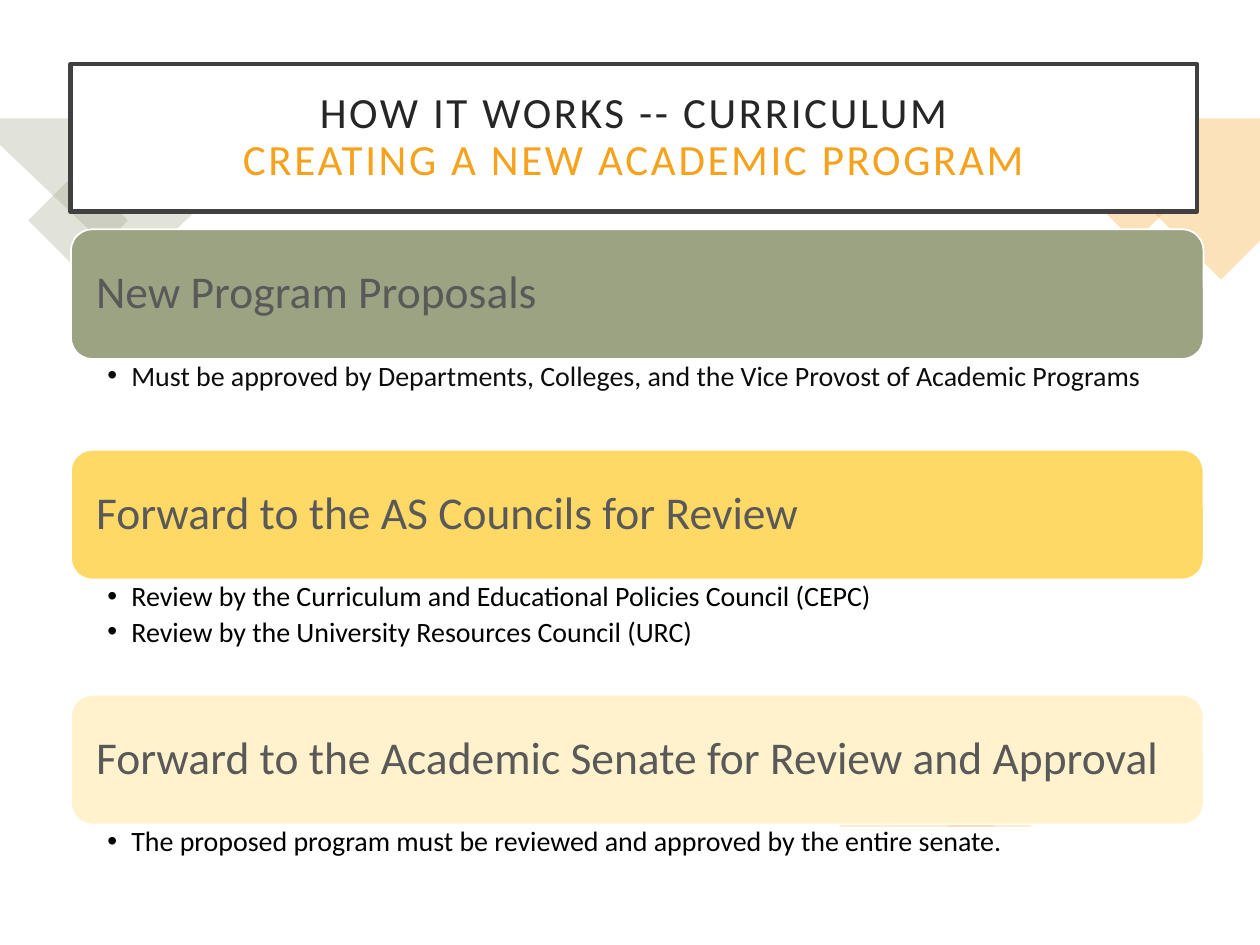
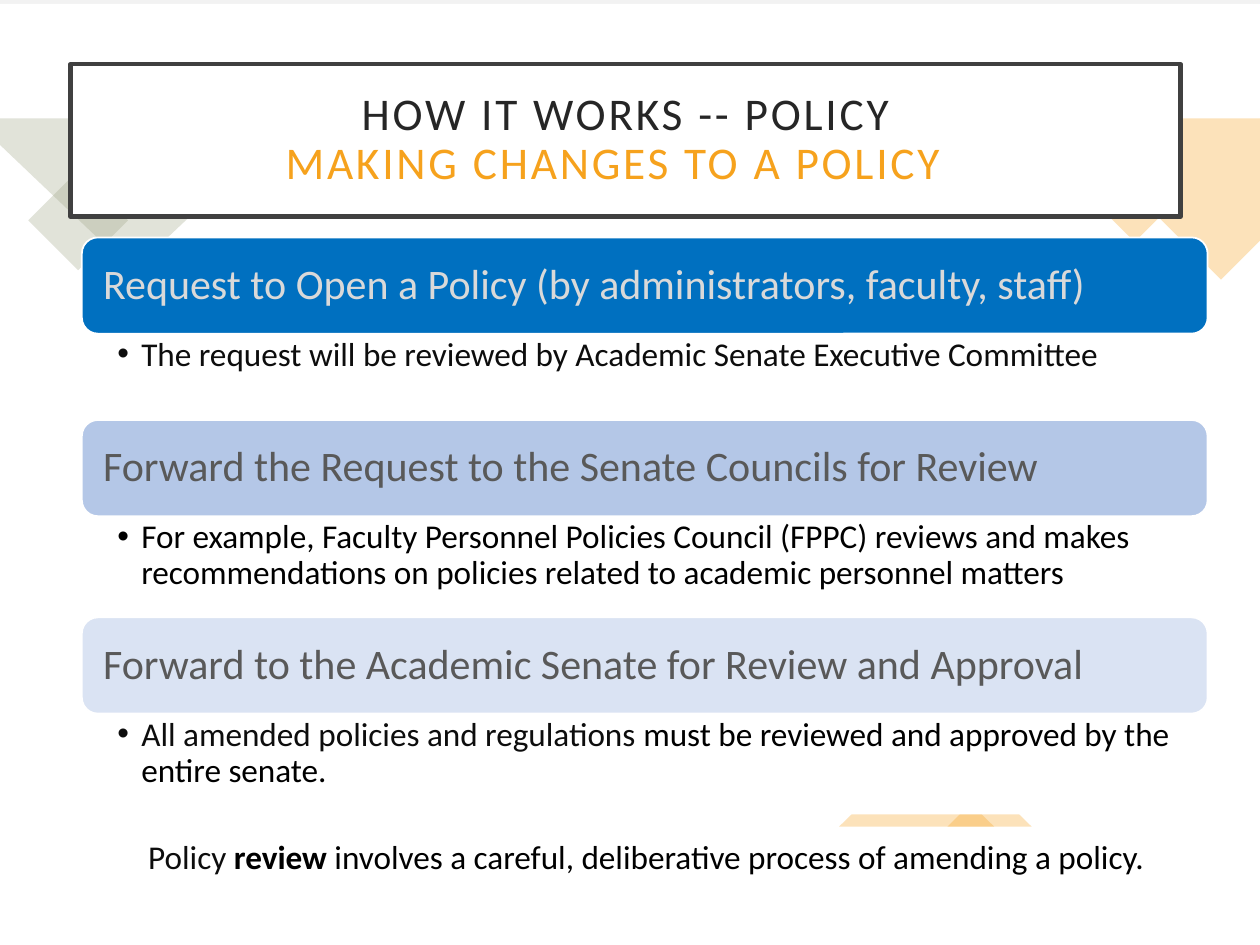
from pptx import Presentation
from pptx.dml.color import RGBColor
from pptx.enum.shapes import MSO_SHAPE
from pptx.enum.text import MSO_ANCHOR, MSO_AUTO_SIZE, PP_ALIGN
from pptx.oxml.ns import qn
from pptx.util import Pt
from lxml import etree

RECTANGLE, ROUNDED = MSO_SHAPE.RECTANGLE, MSO_SHAPE.ROUNDED_RECTANGLE
TRIANGLE = MSO_SHAPE.ISOSCELES_TRIANGLE
TOP, MIDDLE = MSO_ANCHOR.TOP, MSO_ANCHOR.MIDDLE
LEFT, CENTER = PP_ALIGN.LEFT, PP_ALIGN.CENTER
NO_AUTOFIT = MSO_AUTO_SIZE.NONE

FONT = "Calibri"
COLORS = {
    "backdrop": "F2F2F2", "white": "FFFFFF", "frame": "404040",
    "sage": "9CA383", "orange": "F6A21D", "title": "262626",
    "gold": "FFD966", "cream": "FFF2CC",
    "blue": "0070C0", "light_blue": "B4C7E7", "pale_blue": "DAE3F3",
    "gray": "595959", "light_gray": "D9D9D9",
    "ink": "0D0D0D", "black": "000000",
}
SLIDE_WIDTH, SLIDE_HEIGHT = 720, 540

# Decorations: kind, left, top, width, height, rotation, color
DECORATIONS = [
    (RECTANGLE, 24.5, 105.8, 40.3, 40.3, 45, "sage"),
    (RECTANGLE, 629.3, 92.2, 38.2, 38.2, 45, "orange"),
    (TRIANGLE, 479.5, 428.4, 88.6, 44, 0, "orange"),
    (TRIANGLE, 541.4, 448.6, 48.2, 23.8, 0, "orange"),
]
CORNERS = [
    ("sage", [(0, 67.7), (167.8, 67.7), (75.6, 154.8), (0, 82.8)]),
    ("orange", [(637.2, 67.7), (720, 67.7), (720, 137.5), (697.7, 159.8), (621.4, 83.5)]),
]

# Each step: bar top, bar color, heading color, heading, detail height, bullets.
# A bullet is a list of runs: text, color, bold.
SLIDES = [
    {
        "panel_top": 0, "title_size": 24.6, "title_spacing": 150,
        "title_box": (40.3, 36.7, 643.7, 84.2), "subtitle_margin": 0,
        "title": ["HOW IT WORKS -- CURRICULUM", "CREATING A NEW ACADEMIC PROGRAM"],
        "bar_left": 40.5, "bar_width": 647.3, "bar_height": 74.2,
        "heading_size": 26, "heading_inset": 10.8,
        "detail_size": 16, "detail_inset": 20.9, "detail_top_inset": 1.6,
        "detail_space": 3, "detail_fill": None, "note": None,
        "steps": [
            (131, "sage", "gray", "New Program Proposals", 40,
             [[("Must be approved by Departments, Colleges, and the Vice Provost of Academic Programs",
                "ink", False)]]),
            (257, "gold", "gray", "Forward to the AS Councils for Review", 43,
             [[("Review by the Curriculum and Educational Policies Council (CEPC)", "black", False)],
              [("Review by the University Resources Council (URC)", "black", False)]]),
            (397, "cream", "gray", "Forward to the Academic Senate for Review and Approval", 22,
             [[("The proposed program must be reviewed and approved by the entire senate.",
                "black", False)]]),
        ],
    },
    {
        "panel_top": 2.2, "title_size": 25.9, "title_spacing": 160,
        "title_box": (40.3, 36.7, 634.3, 87.1), "subtitle_margin": 14.4,
        "title": ["HOW IT WORKS -- POLICY", "MAKING CHANGES TO A POLICY"],
        "bar_left": 46.8, "bar_width": 643.3, "bar_height": 55,
        "heading_size": 24, "heading_inset": 9.5,
        "detail_size": 19, "detail_inset": 20.3, "detail_top_inset": 2.2,
        "detail_space": 4, "detail_fill": "white",
        "note": [("Policy ", "ink", False), ("review", "black", True),
                 (" involves a careful, deliberative process of amending a policy.", "black", False)],
        "steps": [
            (135.7, "blue", "light_gray",
             "Request to Open a Policy (by administrators, faculty, staff)", 49,
             [[("The request will be reviewed by Academic Senate Executive Committee", "ink", False)]]),
            (240, "light_blue", "gray",
             "Forward the Request to the Senate Councils for Review", 46,
             [[("For example, Faculty Personnel Policies Council (FPPC) reviews and makes "
                "recommendations on policies related to academic personnel matters", "black", False)]]),
            (352.8, "pale_blue", "gray",
             "Forward to the Academic Senate for Review and Approval", 57.6,
             [[("All amended policies and regulations ", "ink", False),
               ("must be reviewed and approved by the entire senate.", "black", False)]]),
        ],
    },
]


def style_shape(shape, fill, line=None, line_width=1, alpha=None):
    if fill:
        shape.fill.solid()
        shape.fill.fore_color.rgb = RGBColor.from_string(COLORS[fill])
    else:
        shape.fill.background()
    if alpha:
        color = shape.fill._xPr.find(qn("a:solidFill"))[0]
        etree.SubElement(color, qn("a:alpha"), val=str(alpha * 1000))
    if line:
        shape.line.color.rgb = RGBColor.from_string(COLORS[line])
        shape.line.width = Pt(line_width)
    else:
        shape.line.fill.background()
    shape.shadow.inherit = False


def write_text(shape, paragraphs, size, insets, anchor=MIDDLE, align=LEFT,
               space=0, bullet=False, spacing=0):
    frame = shape.text_frame
    left, top, right, bottom = insets
    frame_format = {
        "word_wrap": True, "auto_size": NO_AUTOFIT, "vertical_anchor": anchor,
        "margin_left": Pt(left), "margin_top": Pt(top),
        "margin_right": Pt(right), "margin_bottom": Pt(bottom),
    }
    for name, value in frame_format.items():
        setattr(frame, name, value)
    for index, runs in enumerate(paragraphs):
        paragraph = frame.add_paragraph() if index else frame.paragraphs[0]
        paragraph_format = {"alignment": align, "line_spacing": 0.9, "space_before": Pt(space)}
        for name, value in paragraph_format.items():
            setattr(paragraph, name, value)
        if bullet:
            properties = paragraph._p.get_or_add_pPr()
            properties.set("marL", str(Pt(13.7)))
            properties.set("indent", str(-Pt(13.7)))
            etree.SubElement(properties, qn("a:buFont"), typeface="Arial")
            etree.SubElement(properties, qn("a:buChar"), char="•")
        for text, color, bold in runs:
            run = paragraph.add_run()
            run.text = text
            for name, value in {"name": FONT, "size": Pt(size), "bold": bold}.items():
                setattr(run.font, name, value)
            run.font.color.rgb = RGBColor.from_string(COLORS[color])
            if spacing:
                run.font._element.set("spc", str(spacing))


presentation = Presentation()
presentation.slide_width = Pt(SLIDE_WIDTH)
presentation.slide_height = Pt(SLIDE_HEIGHT)

for content in SLIDES:
    slide = presentation.slides.add_slide(presentation.slide_layouts[5])
    shapes = slide.shapes
    slide.background.fill.solid()
    slide.background.fill.fore_color.rgb = RGBColor.from_string(COLORS["backdrop"])

    # White panel and translucent decorations
    panel_top = content["panel_top"]
    panel = shapes.add_shape(RECTANGLE, 0, Pt(panel_top), Pt(SLIDE_WIDTH), Pt(SLIDE_HEIGHT - panel_top))
    style_shape(panel, "white")
    for color, points in CORNERS:
        corners = [(Pt(x), Pt(y)) for x, y in points]
        builder = shapes.build_freeform(*corners[0])
        builder.add_line_segments(corners[1:], close=True)
        style_shape(builder.convert_to_shape(), color, alpha=30)
    for kind, left, top, width, height, rotation, color in DECORATIONS:
        decoration = shapes.add_shape(kind, Pt(left), Pt(top), Pt(width), Pt(height))
        decoration.rotation = rotation
        style_shape(decoration, color, alpha=30)

    # Framed title, raised above the decorations
    title = shapes.title
    shapes._spTree.append(title._element)
    for name, value in zip(("left", "top", "width", "height"), content["title_box"]):
        setattr(title, name, Pt(value))
    style_shape(title, "white", "frame", 2.5)
    heading, subtitle = content["title"]
    write_text(title, [[(heading, "title", False)], [(subtitle, "orange", False)]],
               content["title_size"], (14.4,) * 4, align=CENTER, spacing=content["title_spacing"])
    subtitle_properties = title.text_frame.paragraphs[1]._p.get_or_add_pPr()
    subtitle_properties.set("marR", str(Pt(content["subtitle_margin"])))

    # Steps: a bar with its heading, and bullets below
    left, width = Pt(content["bar_left"]), Pt(content["bar_width"])
    bar_height = content["bar_height"]
    inset, top_inset = content["detail_inset"], content["detail_top_inset"]
    detail_insets = (inset, top_inset, 10, top_inset)
    for top, bar_color, text_color, heading, detail_height, bullets in content["steps"]:
        detail = shapes.add_textbox(left, Pt(top + bar_height), width, Pt(detail_height))
        style_shape(detail, content["detail_fill"])
        write_text(detail, bullets, content["detail_size"], detail_insets, TOP,
                   space=content["detail_space"], bullet=True)
        bar = shapes.add_shape(ROUNDED, left, Pt(top), width, Pt(bar_height))
        style_shape(bar, bar_color, "white")
        write_text(bar, [[(heading, text_color, False)]], content["heading_size"],
                   (content["heading_inset"], 0, 8, 0))

    # Closing remark
    if content["note"]:
        note = shapes.add_textbox(Pt(64.8), Pt(478), Pt(609), Pt(25))
        write_text(note, [content["note"]], content["detail_size"], (2.2,) * 4, TOP, CENTER)

presentation.save("out.pptx")
